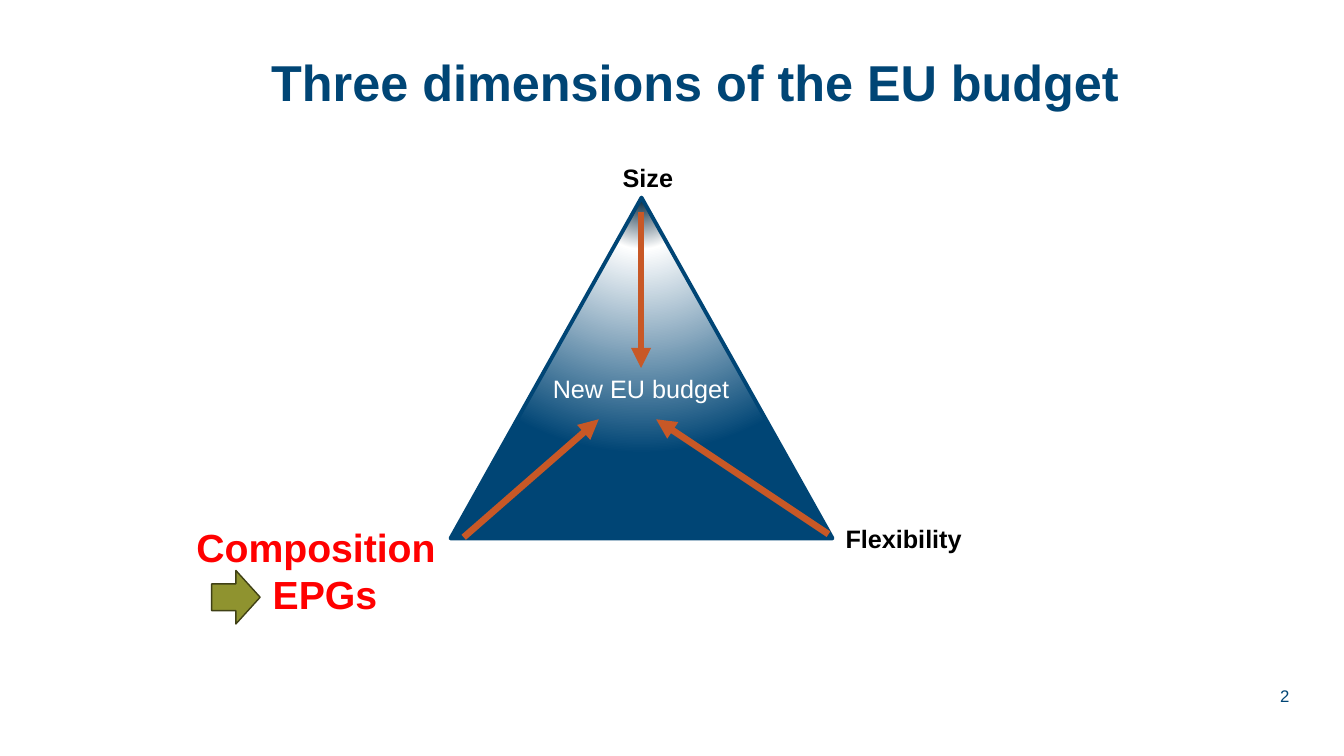
import lxml.etree
import pptx
import pptx.dml.color
import pptx.enum.shapes
import pptx.enum.text
import pptx.oxml
import pptx.oxml.ns
import pptx.util

Pt = pptx.util.Pt
RGBColor = pptx.dml.color.RGBColor
Align = pptx.enum.text.PP_ALIGN
Anchor = pptx.enum.text.MSO_ANCHOR
Shape = pptx.enum.shapes.MSO_SHAPE
qn = pptx.oxml.ns.qn

NAVY = RGBColor(0x00, 0x45, 0x75)
DARK_NAVY = RGBColor(0x00, 0x23, 0x3B)
WHITE = RGBColor(0xFF, 0xFF, 0xFF)
BLACK = RGBColor(0x00, 0x00, 0x00)
RED = RGBColor(0xFF, 0x00, 0x00)
ORANGE = RGBColor(0xC8, 0x58, 0x26)
OLIVE = RGBColor(0x8F, 0x93, 0x2F)
DARK_OLIVE = RGBColor(0x3F, 0x40, 0x15)

FONT = "Arial"
CENTRE_X = 457.92
LABEL_HEIGHT = 28.8
BASE_LABEL_TOP = 370


def add_text(slide, box, lines, size, color, bold=False, align=Align.LEFT,
             anchor=Anchor.TOP, line_spacing=None):
    """Add a text box; lines is a list of (text, left indent in points)."""
    shape = slide.shapes.add_textbox(*map(Pt, box))
    frame = shape.text_frame
    frame.word_wrap = True
    frame.vertical_anchor = anchor
    frame.text = "\n".join(text for text, indent in lines)
    for paragraph, (text, indent) in zip(frame.paragraphs, lines):
        paragraph.alignment = align
        if line_spacing:
            paragraph.line_spacing = line_spacing
        if indent:
            paragraph._p.get_or_add_pPr().set("marL", str(Pt(indent)))
        for run in paragraph.runs:
            run.font.name = FONT
            run.font.size = Pt(size)
            run.font.bold = bold
            run.font.color.rgb = color


def add_outlined_shape(slide, kind, box, fill, line, line_width):
    shape = slide.shapes.add_shape(kind, *map(Pt, box))
    shape.shadow.inherit = False
    shape.fill.solid()
    shape.fill.fore_color.rgb = fill
    shape.line.color.rgb = line
    shape.line.width = Pt(line_width)
    return shape


def set_radial_gradient(shape, stops):
    """Replace the solid fill by a circular gradient centred above the shape."""
    stop_xml = "".join(
        f'<a:gs pos="{percent * 1000}"><a:srgbClr val="{color}"/></a:gs>'
        for percent, color in stops)
    gradient = pptx.oxml.parse_xml(
        f'<a:gradFill {pptx.oxml.ns.nsdecls("a")} rotWithShape="1">'
        f'<a:gsLst>{stop_xml}</a:gsLst><a:path path="circle">'
        '<a:fillToRect l="50000" t="-80000" r="50000" b="180000"/>'
        '</a:path></a:gradFill>')
    properties = shape._element.spPr
    properties.replace(properties.find(qn("a:solidFill")), gradient)


def add_arrow(slide, start, end):
    connector = slide.shapes.add_connector(
        pptx.enum.shapes.MSO_CONNECTOR.STRAIGHT, *map(Pt, start + end))
    connector.line.color.rgb = ORANGE
    connector.line.width = Pt(4.75)
    line = connector.line._get_or_add_ln()
    lxml.etree.SubElement(line, qn("a:tailEnd"), type="triangle")
    lxml.etree.SubElement(connector._element.spPr, qn("a:effectLst"))


def main():
    presentation = pptx.Presentation()
    presentation.slide_width = Pt(960)
    presentation.slide_height = Pt(540)
    slide = presentation.slides.add_slide(presentation.slide_layouts[6])

    add_text(slide, (892.8, 478.8, 35.3, LABEL_HEIGHT), [("2", 0)], 12, NAVY,
             align=Align.RIGHT, anchor=Anchor.BOTTOM)
    add_text(slide, (82.8, 38.2, 828, 104.4),
             [("Three dimensions of the EU budget", 0)], 36, NAVY, bold=True,
             align=Align.CENTER, line_spacing=0.9)

    triangle = add_outlined_shape(slide, Shape.ISOSCELES_TRIANGLE,
                                  (321.8, 141.1, 272.9, 243.4), NAVY, NAVY, 2.75)
    set_radial_gradient(triangle, [(0, DARK_NAVY), (20, WHITE), (100, NAVY)])

    for start, end in [((331.2, 383.8), (427.7, 299.5)),
                       ((591.8, 381.6), (468.7, 299.5)),
                       ((CENTRE_X, 151.2), (CENTRE_X, 262.8))]:
        add_arrow(slide, start, end)

    add_text(slide, (381.6, 262.8, 152.6, LABEL_HEIGHT), [("New EU budget", 0)],
             18, WHITE, align=Align.CENTER)
    add_text(slide, (427.7, 112.3, 82, LABEL_HEIGHT), [("Size", 10)],
             18, BLACK, bold=True)
    add_text(slide, (133.2, BASE_LABEL_TOP, 195.1, 74.9),
             [("Composition", 0), ("EPGs", 54.5)], 28, RED, bold=True)
    add_text(slide, (596.9, BASE_LABEL_TOP, 122.4, LABEL_HEIGHT),
             [("Flexibility", 0)], 18, BLACK, bold=True)
    add_outlined_shape(slide, Shape.RIGHT_ARROW, (151.2, 407.5, 34.6, 38.2),
                       OLIVE, DARK_OLIVE, 1)

    presentation.save("out.pptx")


if __name__ == "__main__":
    main()
